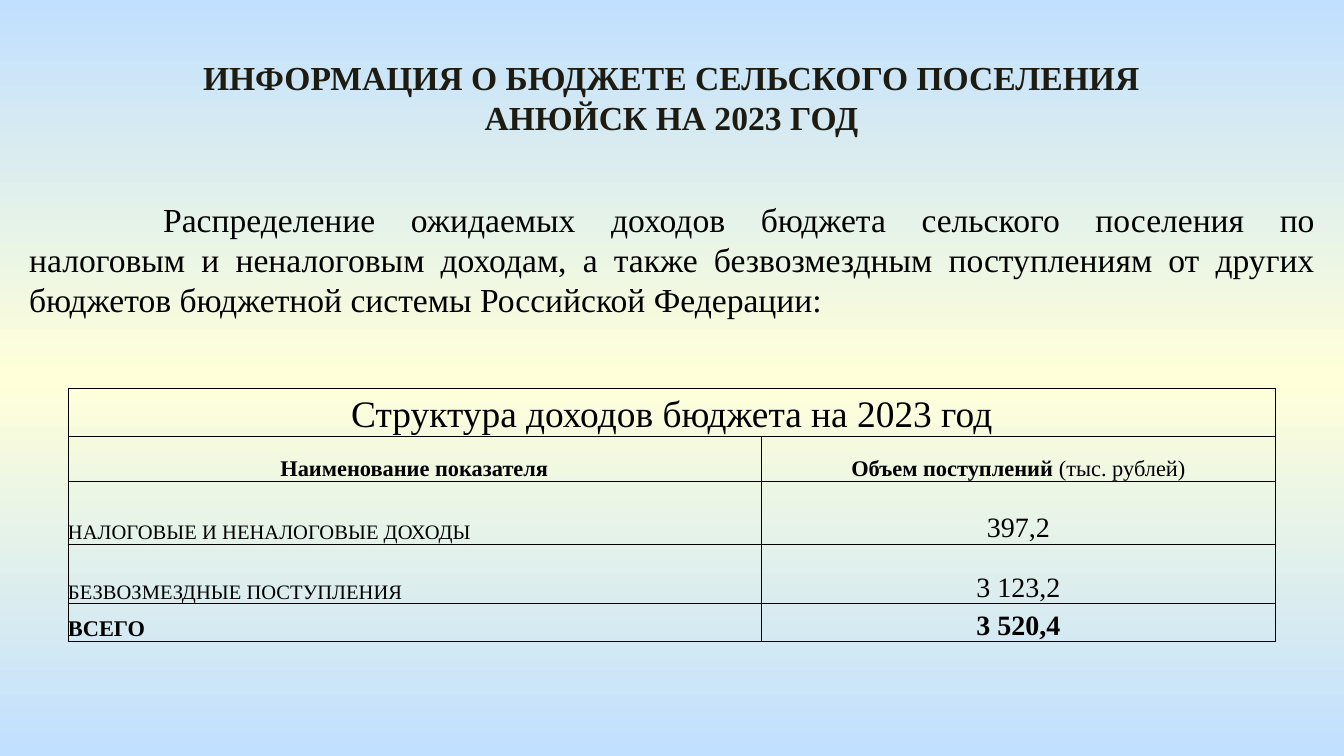
import lxml.etree
import pptx
import pptx.dml.color
import pptx.enum.shapes
import pptx.enum.text
import pptx.oxml.ns
import pptx.util

BLUE = pptx.dml.color.RGBColor(0xC1, 0xE0, 0xFF)
CREAM = pptx.dml.color.RGBColor(0xFF, 0xFF, 0xD9)
DARK = pptx.dml.color.RGBColor(0x1E, 0x1C, 0x11)
BLACK = pptx.dml.color.RGBColor(0, 0, 0)
FONT = "Times New Roman"
ALIGN = pptx.enum.text.PP_ALIGN
ANCHOR = pptx.enum.text.MSO_ANCHOR
RECTANGLE = pptx.enum.shapes.MSO_SHAPE.RECTANGLE
qn = pptx.oxml.ns.qn


def px(length):
    return pptx.util.Emu(round(length * 914400 / 134.4))


def write(para, text, size=18, bold=False, color=BLACK, align=ALIGN.CENTER):
    para.alignment = align
    span = para.add_run()
    span.text = text
    span.font.name = FONT
    span.font.size = pptx.util.Pt(size)
    span.font.bold = bold
    span.font.color.rgb = color


class BudgetPage:
    def __init__(self, deck):
        self.page = deck.slides.add_slide(deck.slide_layouts[5])

    def background(self, colors):
        fill = self.page.background.fill
        fill.gradient()
        fill.gradient_angle = 90
        stops = self.page.element.xpath(".//a:gsLst")[0]
        for stop in list(stops):
            stops.remove(stop)
        for index, color in enumerate(colors):
            position = 100000 * index // (len(colors) - 1)
            stop = lxml.etree.SubElement(stops, qn("a:gs"), pos=str(position))
            lxml.etree.SubElement(stop, qn("a:srgbClr"), val=str(color))

    def title(self, text, left, top, width, height):
        box = self.page.shapes.title
        box.left, box.top, box.width, box.height = map(px, (left, top, width, height))
        frame = box.text_frame
        frame.auto_size = pptx.enum.text.MSO_AUTO_SIZE.NONE
        frame.vertical_anchor = ANCHOR.TOP
        write(frame.paragraphs[0], text, bold=True, color=DARK)

    def paragraph(self, text, left, top, width, height, indent):
        box = self.page.shapes.add_shape(RECTANGLE, *map(px, (left, top, width, height)))
        box.shadow.inherit = False
        box.line.fill.background()
        # The box is filled with the slide background
        box.element.set("useBgFill", "1")
        box.text_frame.word_wrap = True
        box.text_frame.vertical_anchor = ANCHOR.TOP
        para = box.text_frame.paragraphs[0]
        write(para, text, align=ALIGN.JUSTIFY)
        para._p.get_or_add_pPr().set("indent", str(px(indent)))

    def table(self, rows, left, top, widths, heights):
        frame = self.page.shapes.add_table(
            len(heights), len(widths), px(left), px(top), px(sum(widths)), px(sum(heights)))
        table = frame.table
        table.first_row = table.horz_banding = False
        for column, width in zip(table.columns, widths):
            column.width = px(width)
        for row, height in zip(table.rows, heights):
            row.height = px(height)
        table.cell(0, 0).merge(table.cell(0, len(widths) - 1))
        for row, contents in enumerate(rows):
            for column, (align, spans) in enumerate(contents):
                para = table.cell(row, column).text_frame.paragraphs[0]
                for text, size, bold in spans:
                    write(para, text, size=size, bold=bold, align=align)
        for cell in table.iter_cells():
            self.style_cell(cell)

    def style_cell(self, cell):
        cell.margin_left = cell.margin_right = cell.margin_top = cell.margin_bottom = 0
        cell.vertical_anchor = ANCHOR.BOTTOM
        cell.fill.background()
        properties = cell._tc.get_or_add_tcPr()
        for index, side in enumerate("LRTB"):
            line = properties.makeelement(qn("a:ln" + side), {"w": str(pptx.util.Pt(0.5))})
            fill = lxml.etree.SubElement(line, qn("a:solidFill"))
            lxml.etree.SubElement(fill, qn("a:srgbClr"), val=str(BLACK))
            properties.insert(index, line)


def main():
    deck = pptx.Presentation()
    deck.slide_width, deck.slide_height = px(1344), px(756)
    budget = BudgetPage(deck)
    budget.background([BLUE, CREAM, BLUE])

    # Heading and introduction
    budget.title("ИНФОРМАЦИЯ О БЮДЖЕТЕ СЕЛЬСКОГО ПОСЕЛЕНИЯ АНЮЙСК НА 2023 ГОД",
                 152, 50, 1039, 95)
    budget.paragraph(
        "Распределение ожидаемых доходов бюджета сельского поселения по налоговым "
        "и неналоговым доходам, а также безвозмездным поступлениям от других "
        "бюджетов бюджетной системы Российской Федерации:",
        16, 192, 1313, 136, indent=134)

    # Revenue table: caption, header, then one row per kind of revenue
    rows = [
        [(ALIGN.CENTER, [("Структура доходов бюджета на 2023 год", 20, False)])],
        [(ALIGN.CENTER, [("Наименование показателя", 12, True)]),
         (ALIGN.CENTER, [("Объем поступлений ", 12, True), ("(тыс. рублей)", 12, False)])],
    ]
    revenues = [
        ("НАЛОГОВЫЕ И НЕНАЛОГОВЫЕ ДОХОДЫ", "397,2", 11, False),
        ("БЕЗВОЗМЕЗДНЫЕ ПОСТУПЛЕНИЯ", "3 123,2", 11, False),
        ("ВСЕГО", "3 520,4", 12, True),
    ]
    for name, amount, size, bold in revenues:
        rows.append([(ALIGN.LEFT, [(name, size, bold)]),
                     (ALIGN.CENTER, [(amount, 15, bold)])])
    budget.table(rows, 68, 388, widths=[693, 515], heights=[48, 45, 63, 60, 38])

    deck.save("out.pptx")


if __name__ == "__main__":
    main()
